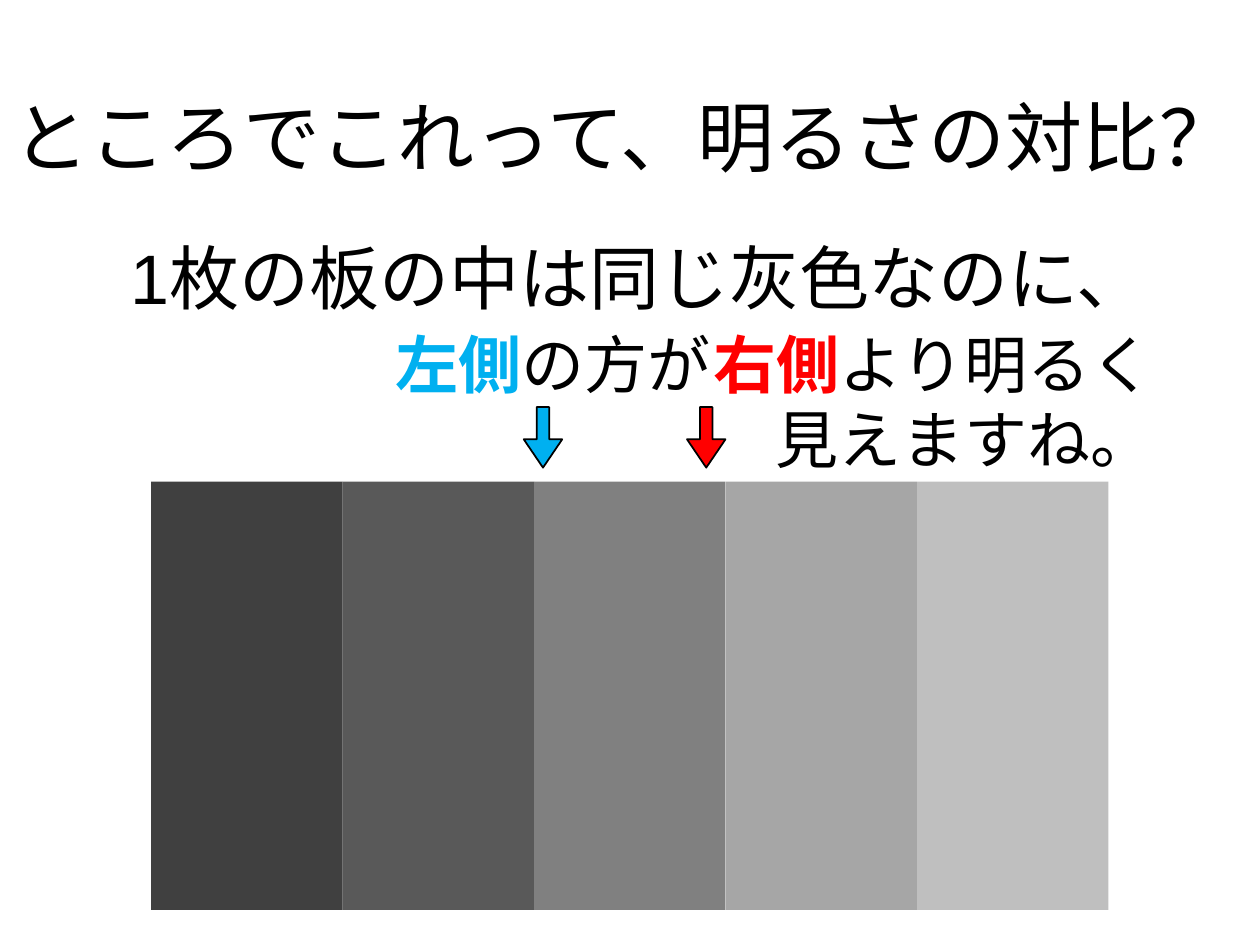
from pptx import Presentation
from pptx import util as u
from pptx.dml.color import RGBColor
from pptx.enum import shapes, text

Pt = u.Pt
COLORS = {"black": "000000", "blue": "00B0F0", "red": "FF0000"}
GRAYS = ["404040", "595959", "808080", "A6A6A6", "BFBFBF"]


def write(paragraph, content, size=36, color="black", bold=False):
    """Append a run to the paragraph; a newline becomes a line break."""
    for index, line in enumerate(content.split("\n")):
        if index:
            paragraph.add_line_break()
        run = paragraph.add_run()
        run.text = line
        run.font.name = "Arial"
        run.font.size = Pt(size)
        run.font.bold = bold
        run.font.color.rgb = RGBColor.from_string(COLORS[color])


def add_label(left, top, width, height, align=text.PP_ALIGN.LEFT):
    """Add an unwrapped text box and return its first paragraph."""
    box = slide.shapes.add_textbox(Pt(left), Pt(top), Pt(width), Pt(height))
    box.text_frame.word_wrap = False
    box.text_frame.auto_size = text.MSO_AUTO_SIZE.SHAPE_TO_FIT_TEXT
    paragraph = box.text_frame.paragraphs[0]
    paragraph.alignment = align
    return paragraph


presentation = Presentation()
presentation.slide_width, presentation.slide_height = Pt(720), Pt(540)
slide = presentation.slides.add_slide(presentation.slide_layouts[5])

# Title
title = slide.shapes.title
title.left, title.top, title.width, title.height = Pt(0), Pt(28.8), Pt(720), Pt(104.4)
title.text_frame.auto_size = text.MSO_AUTO_SIZE.NONE
title.text_frame.vertical_anchor = text.MSO_ANCHOR.MIDDLE
paragraph = title.text_frame.paragraphs[0]
paragraph.alignment = text.PP_ALIGN.LEFT
paragraph.line_spacing = 0.9
write(paragraph, "ところでこれって、明るさの対比？", size=44)

# Gray boards, side by side
board_width = 109.4
boards = slide.shapes.add_group_shape()
for index, gray in enumerate(GRAYS):
    board = boards.shapes.add_shape(
        shapes.MSO_SHAPE.RECTANGLE,
        Pt(86.4 + index * board_width), Pt(275.2), Pt(board_width), Pt(244.8))
    board.shadow.inherit = False
    board.fill.solid()
    board.fill.fore_color.rgb = RGBColor.from_string(gray)
    board.line.fill.background()

# Arrows to the two edges of the middle board
for left, color in [(299.3, "blue"), (392.6, "red")]:
    arrow = slide.shapes.add_shape(
        shapes.MSO_SHAPE.DOWN_ARROW, Pt(left), Pt(232.6), Pt(22), Pt(34.6))
    arrow.adjustments[0] = 0.324
    arrow.adjustments[1] = 0.735
    arrow.shadow.inherit = False
    arrow.fill.solid()
    arrow.fill.fore_color.rgb = RGBColor.from_string(COLORS[color])
    arrow.line.color.rgb = RGBColor.from_string(COLORS["black"])
    arrow.line.width = Pt(1)

# Explanation
paragraph = add_label(67.7, 130.3, 602.6, 55.4)
write(paragraph, "1枚の板の中は同じ灰色なのに、", size=40)

paragraph = add_label(218.9, 182.2, 195.1, 51.1)
write(paragraph, "左側", color="blue", bold=True)
write(paragraph, "の方が")

paragraph = add_label(397.4, 182.2, 268.6, 94.3, align=text.PP_ALIGN.RIGHT)
write(paragraph, "右側", color="red", bold=True)
write(paragraph, "より明るく\n見えますね。")

presentation.save("out.pptx")
